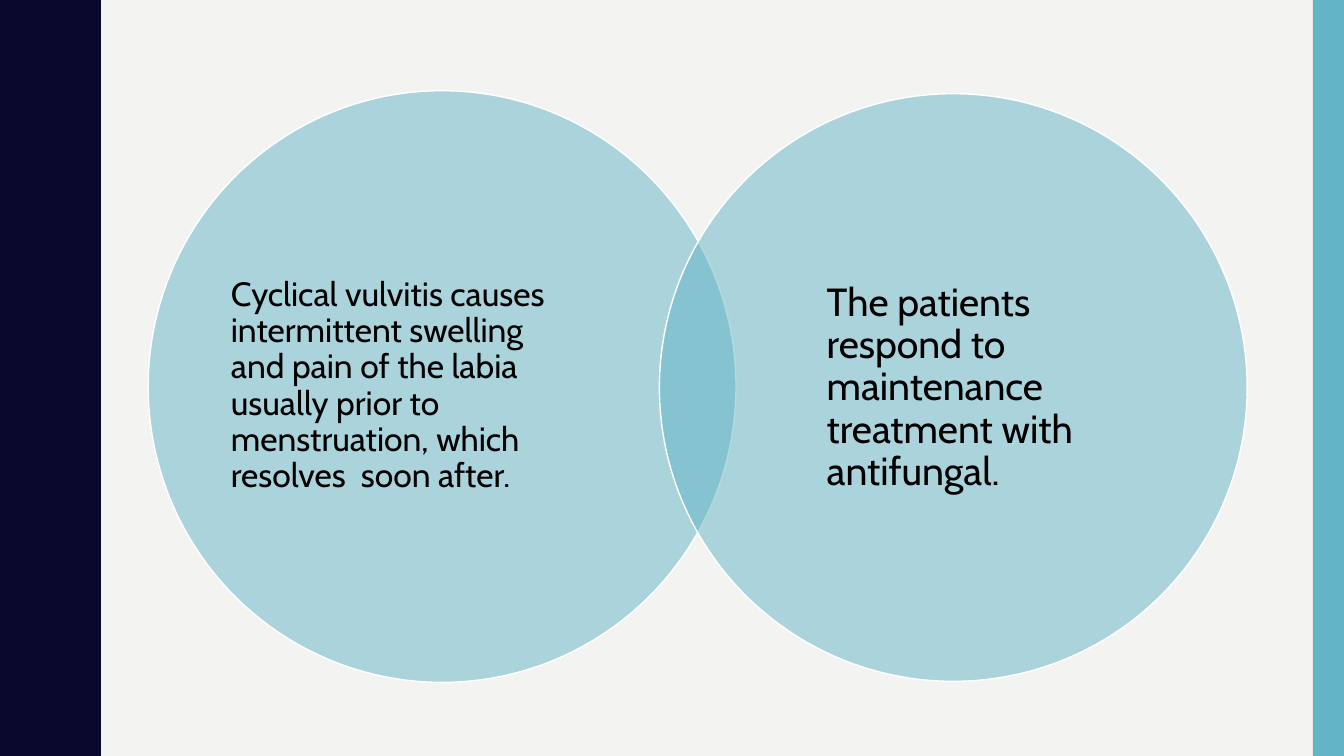
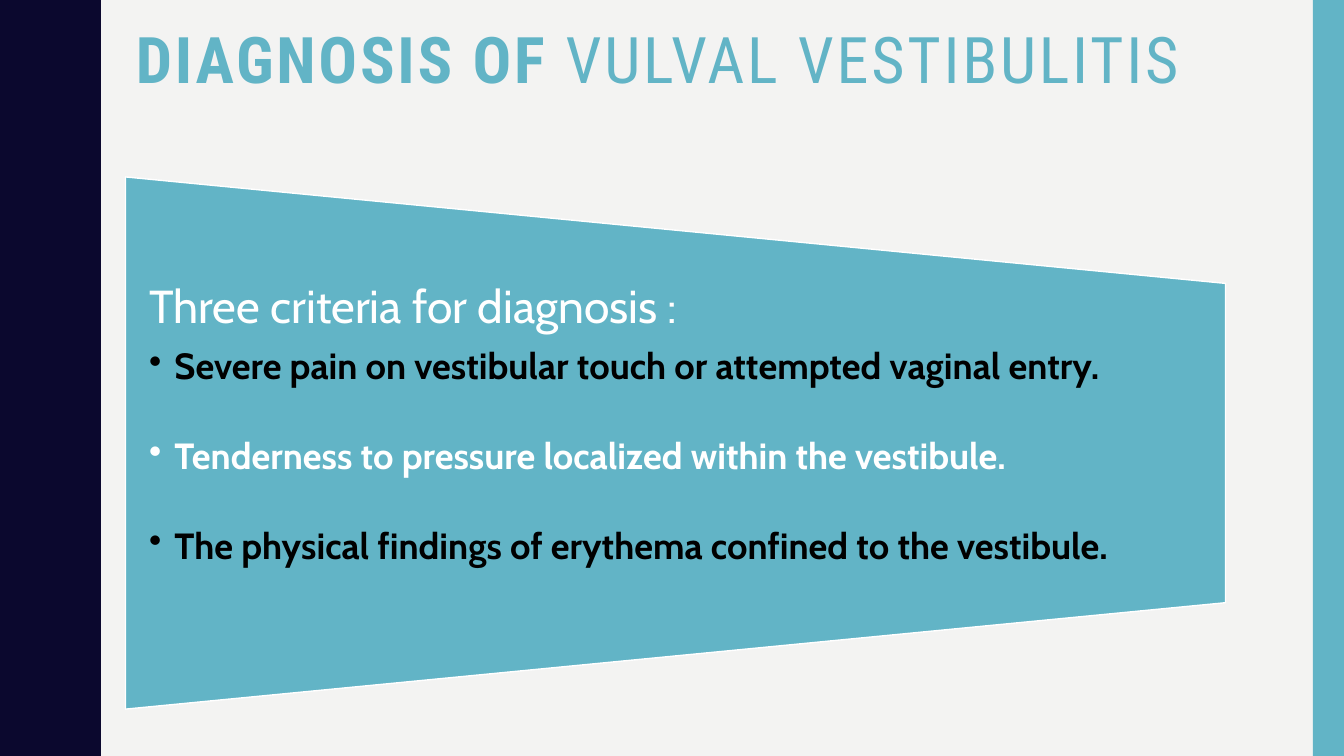
from lxml import etree
from pptx import Presentation
from pptx.dml.color import RGBColor
from pptx.enum import shapes, text
from pptx.oxml import ns
from pptx.util import Inches, Pt

NAVY, TEAL, PAPER = "0B082E", "62B4C6", "F3F3F2"
WHITE, BLACK = "FFFFFF", "000000"
BODY, HEADING = "Cabin", "Roboto Condensed"
WIDTH, HEIGHT = 13.33, 7.5

WAVE_PERIOD = 1.5
WAVE_RISE = [(0.78, 0), (0.78, 0.07), (0.79, 0.14), (0.8, 0.2), (0.81, 0.25),
             (0.83, 0.29), (0.85, 0.33), (0.87, 0.38), (0.89, 0.42), (0.91, 0.46),
             (0.93, 0.5), (0.95, 0.55), (0.96, 0.61), (0.97, 0.68), (0.97, 0.75)]

CIRCLES = [
    {"circle": (1.47, 0.9, 5.83, 5.87), "box": (2.29, 1.59, 3.36, 4.48), "size": 24,
     "words": "Cyclical vulvitis causes intermittent swelling and pain of the labia "
              "usually prior to menstruation, which resolves  soon after."},
    {"circle": (6.54, 0.93, 5.83, 5.83), "box": (8.2, 1.62, 3.36, 4.46), "size": 28,
     "words": "The patients respond to maintenance treatment with antifungal."},
]

TITLE = [("DIAGNOSIS OF ", True), ("VULVAL VESTIBULITIS", False)]
CRITERIA_LEAD = "Three criteria for diagnosis :"
CRITERIA = [
    ("Severe pain on vestibular touch or attempted vaginal entry.", BLACK),
    ("Tenderness to pressure localized within the vestibule.", WHITE),
    ("The physical findings of erythema confined to the vestibule.", BLACK),
]


def rgb(colour):
    return RGBColor.from_string(colour)


def paint(shape, fill, outline=None, opacity=None):
    shape.shadow.inherit = False
    shape.fill.solid()
    shape.fill.fore_color.rgb = rgb(fill)
    if opacity:
        colour = shape.fill._xPr.find(".//" + ns.qn("a:srgbClr"))
        etree.SubElement(colour, ns.qn("a:alpha")).set("val", str(opacity * 1000))
    if outline:
        shape.line.color.rgb = rgb(outline)
        shape.line.width = Pt(1)
    else:
        shape.line.fill.background()


def add_preset(slide, kind, box, *style):
    shape = slide.shapes.add_shape(kind, *map(Inches, box))
    paint(shape, *style)
    return shape


def add_frame(slide, box, anchor=text.MSO_ANCHOR.TOP, side=0, top=0):
    frame = slide.shapes.add_textbox(*map(Inches, box)).text_frame
    frame.word_wrap = True
    frame.vertical_anchor = anchor
    frame.margin_left = frame.margin_right = Inches(side)
    frame.margin_top, frame.margin_bottom = Inches(top), 0
    return frame


def add_run(paragraph, words, size, colour, font=BODY, bold=False):
    paragraph.line_spacing = 0.9
    run = paragraph.add_run()
    run.text = words
    run.font.name, run.font.size, run.font.bold = font, Pt(size), bold
    run.font.color.rgb = rgb(colour)
    return run


def add_bullet(paragraph):
    properties = paragraph._p.get_or_add_pPr()
    properties.set("marL", str(Inches(0.25)))
    properties.set("indent", str(-Inches(0.25)))
    etree.SubElement(properties, ns.qn("a:buChar")).set("char", "•")


def new_slide(deck):
    slide = deck.slides.add_slide(deck.slide_layouts[6])
    period = WAVE_RISE + [(x, WAVE_PERIOD - y) for x, y in WAVE_RISE[-2::-1]]
    edge = [(x, y + WAVE_PERIOD * turn)
            for turn in range(int(HEIGHT / WAVE_PERIOD)) for x, y in period]
    wave = slide.shapes.build_freeform(0, 0, scale=Inches(1))
    wave.add_line_segments(edge + [(0, HEIGHT)], close=True)
    paint(wave.convert_to_shape(), NAVY)
    add_preset(slide, shapes.MSO_SHAPE.RECTANGLE, (13.02, 0, 0.31, HEIGHT), TEAL)
    return slide


def build_circles(deck):
    slide = new_slide(deck)
    for part in CIRCLES:
        add_preset(slide, shapes.MSO_SHAPE.OVAL, part["circle"], TEAL, WHITE, 50)
        frame = add_frame(slide, part["box"], text.MSO_ANCHOR.MIDDLE)
        add_run(frame.paragraphs[0], part["words"], part["size"], BLACK)


def build_diagnosis(deck):
    slide = new_slide(deck)
    title = add_frame(slide, (1.25, 0.23, 11.13, 1.43), side=0.1, top=0.05).paragraphs[0]
    for words, bold in TITLE:
        run = add_run(title, words, 45.9, TEAL, HEADING, bold)
        run.font._element.set("spc", "200")

    panel = add_preset(slide, shapes.MSO_SHAPE.FLOWCHART_MANUAL_OPERATION,
                       (4.06, -1.06, 5.28, 10.91), TEAL, WHITE)
    panel.rotation = 270

    frame = add_frame(slide, (1.25, 2.81, 10.91, 3.17), side=0.23)
    lead = frame.paragraphs[0]
    add_run(lead, CRITERIA_LEAD, 33, WHITE)
    lead.space_after = Pt(11)
    for words, colour in CRITERIA:
        criterion = frame.add_paragraph()
        add_bullet(criterion)
        add_run(criterion, words, 26, colour, bold=True)
        criterion.space_after = Pt(36)


def main():
    """Build the two slides on vulvitis and vestibulitis."""
    deck = Presentation()
    deck.slide_width, deck.slide_height = Inches(WIDTH), Inches(HEIGHT)
    backdrop = deck.slide_master.background.fill
    backdrop.solid()
    backdrop.fore_color.rgb = rgb(PAPER)
    build_circles(deck)
    build_diagnosis(deck)
    deck.save("out.pptx")


if __name__ == "__main__":
    main()
